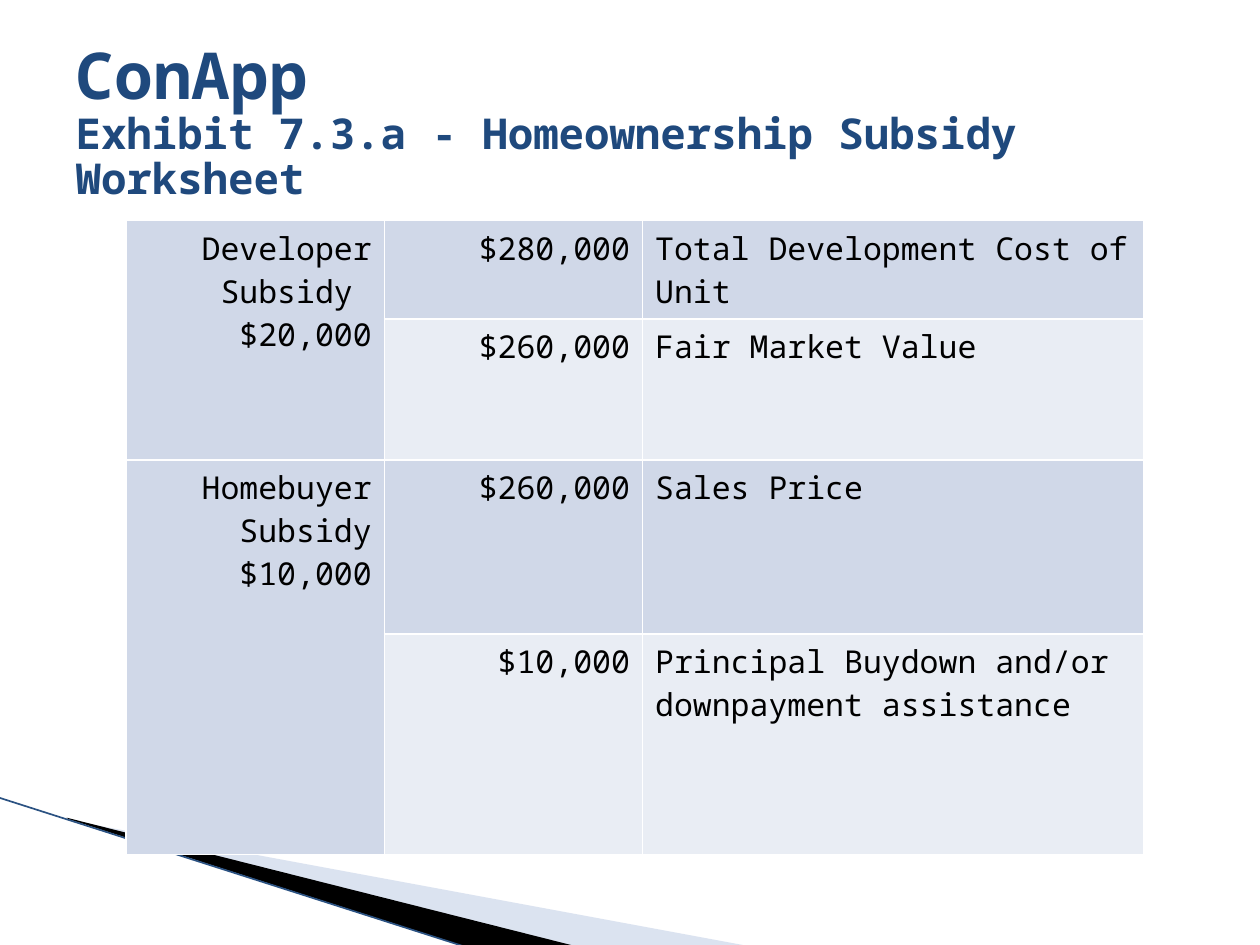
from dataclasses import dataclass

from lxml.etree import SubElement
from pptx import Presentation
from pptx.dml.color import RGBColor
from pptx.enum.shapes import MSO_CONNECTOR
from pptx.enum.text import MSO_ANCHOR, PP_ALIGN
from pptx.oxml.ns import qn
from pptx.util import Inches, Pt

FONT = "Noto Sans Mono"
NAVY, BLACK, WHITE = "1F497D", "000000", "FFFFFF"
BAND_DARK, BAND_LIGHT = "D0D8E8", "E9EDF4"


@dataclass
class Wedge:
    points: list[tuple[float, float]]
    color: str
    opacity: int = 100


@dataclass
class Subsidy:
    label: list[str]
    lines: list[tuple[str, str]]


WEDGES = [
    Wedge([(0.55, 6.51), (5.95, 7.51), (4.56, 7.51), (0.55, 6.5)], "A7B9DB", 40),
    Wedge([(0.53, 6.49), (4.57, 7.51), (3.72, 7.52), (0.54, 6.5)], BLACK),
]
SUBSIDIES = [
    Subsidy(["Developer Subsidy ", "$20,000"],
            [("$280,000", "Total Development Cost of Unit"),
             ("$260,000", "Fair Market Value")]),
    Subsidy(["Homebuyer Subsidy", "$10,000"],
            [("$260,000", "Sales Price"),
             ("$10,000", "Principal Buydown and/or downpayment assistance")]),
]
COL_WIDTHS = [2.05, 2.05, 3.98]
ROW_HEIGHTS = [0.78, 1.12, 1.38, 1.75]


def rgb(color: str) -> RGBColor:
    return RGBColor.from_string(color)


def add_run(p, text: str, size: float, color: str, bold: bool = False) -> None:
    r = p.add_run()
    r.text = text
    r.font.name, r.font.size, r.font.bold = FONT, Pt(size), bold
    r.font.color.rgb = rgb(color)


def add_wedge(s, wedge: Wedge) -> None:
    points = [(Inches(x), Inches(y)) for x, y in wedge.points]
    builder = s.shapes.build_freeform(*points[0])
    builder.add_line_segments(points[1:], close=True)
    sp = builder.convert_to_shape()
    sp.shadow.inherit = False
    sp.line.fill.background()
    sp.fill.solid()
    sp.fill.fore_color.rgb = rgb(wedge.color)
    if wedge.opacity < 100:
        clr = sp.fill._xPr.find(".//" + qn("a:srgbClr"))
        SubElement(clr, qn("a:alpha"), val=str(wedge.opacity * 1000))


def add_edge_line(s) -> None:
    line = s.shapes.add_connector(MSO_CONNECTOR.STRAIGHT, Inches(-0.01), Inches(6.33),
                                  Inches(3.71), Inches(7.52))
    line.line.color.rgb = rgb("2B5282")
    line.line.width = Pt(0.95)
    SubElement(line._element.spPr, qn("a:effectLst"))


def add_title(s) -> None:
    title = s.shapes.title
    title.left, title.top = Inches(0.5), Inches(0.3)
    title.width, title.height = Inches(9), Inches(1.25)
    tf = title.text_frame
    tf.word_wrap = True
    tf.vertical_anchor = MSO_ANCHOR.MIDDLE
    tf.margin_top, tf.margin_bottom = Inches(0.12), 0
    p = tf.paragraphs[0]
    p.alignment = PP_ALIGN.LEFT
    p.line_spacing = 0.88
    add_run(p, "ConApp", 36.9, NAVY, True)
    p.add_line_break()
    add_run(p, "Exhibit 7.3.a - Homeownership Subsidy Worksheet", 24.3, NAVY, True)


def style_cell(cell, fill: str) -> None:
    tcPr = cell._tc.get_or_add_tcPr()
    for side in ("L", "R", "T", "B"):
        ln = SubElement(tcPr, qn(f"a:ln{side}"), w=str(Pt(1)))
        SubElement(SubElement(ln, qn("a:solidFill")), qn("a:srgbClr"), val=WHITE)
    cell.fill.solid()
    cell.fill.fore_color.rgb = rgb(fill)


def write_cell(cell, texts: list[str], align: PP_ALIGN) -> None:
    tf = cell.text_frame
    for i, text in enumerate(texts):
        p = tf.add_paragraph() if i else tf.paragraphs[0]
        p.alignment = align
        add_run(p, text, 18, BLACK)


def add_worksheet(s) -> None:
    table = s.shapes.add_table(len(ROW_HEIGHTS), len(COL_WIDTHS), Inches(1), Inches(1.75),
                               Inches(sum(COL_WIDTHS)), Inches(sum(ROW_HEIGHTS))).table
    table.first_row = table.horz_banding = False
    for col, width in zip(table.columns, COL_WIDTHS):
        col.width = Inches(width)
    for row, height in zip(table.rows, ROW_HEIGHTS):
        row.height = Inches(height)

    row = 0
    for subsidy in SUBSIDIES:
        label = table.cell(row, 0)
        label.merge(table.cell(row + len(subsidy.lines) - 1, 0))
        write_cell(label, subsidy.label, PP_ALIGN.RIGHT)
        for amount, description in subsidy.lines:
            band = BAND_LIGHT if row % 2 else BAND_DARK
            for col, fill in enumerate([BAND_DARK, band, band]):
                style_cell(table.cell(row, col), fill)
            write_cell(table.cell(row, 1), [amount], PP_ALIGN.RIGHT)
            write_cell(table.cell(row, 2), [description], PP_ALIGN.LEFT)
            row += 1


def main() -> None:
    prs = Presentation()
    prs.slide_width, prs.slide_height = Inches(10), Inches(7.5)
    s = prs.slides.add_slide(prs.slide_layouts[5])
    for wedge in WEDGES:
        add_wedge(s, wedge)
    add_edge_line(s)
    add_title(s)
    add_worksheet(s)
    prs.save("out.pptx")


if __name__ == "__main__":
    main()
